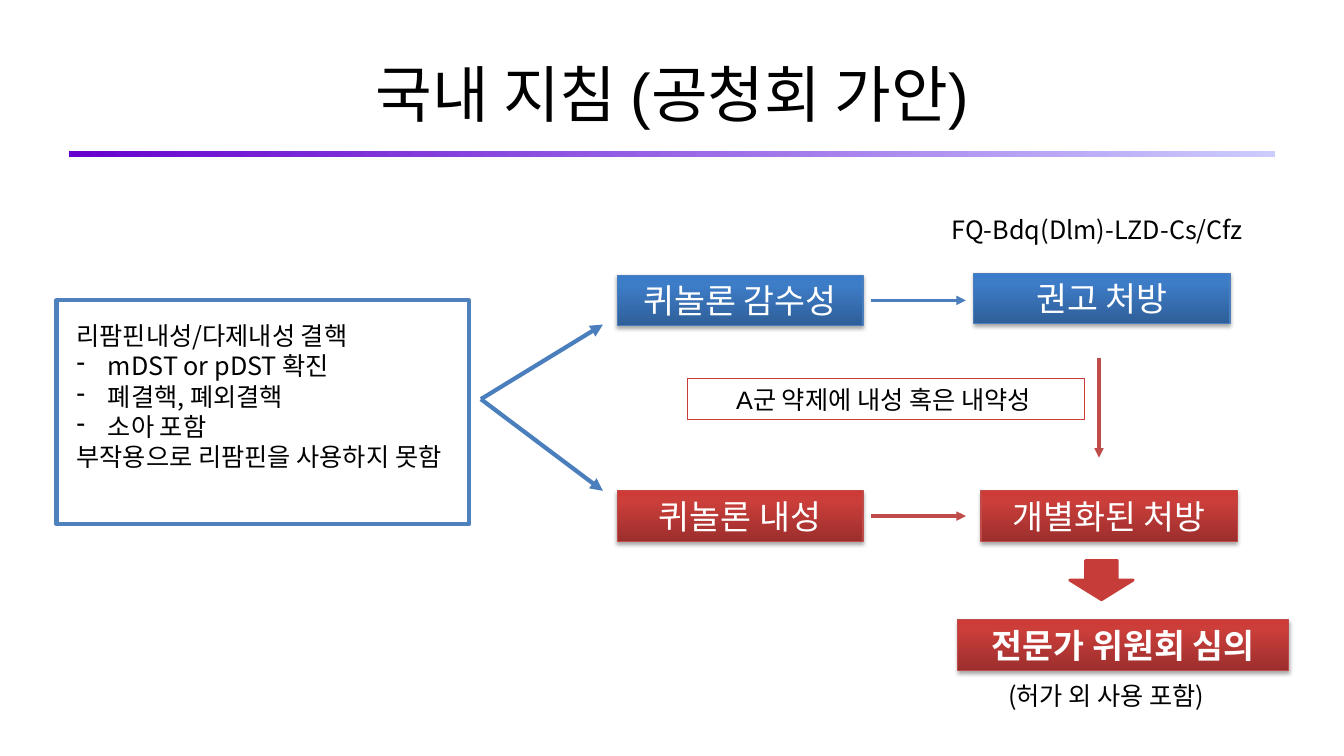
from copy import deepcopy

from lxml import etree
from pptx import Presentation, util as u
from pptx.dml.color import RGBColor
from pptx.enum import shapes, text
from pptx.oxml import parse_xml
from pptx.oxml.ns import nsdecls, qn

BLACK = RGBColor(0x00, 0x00, 0x00)
WHITE = RGBColor(0xFF, 0xFF, 0xFF)
BLUE = RGBColor(0x4B, 0x7E, 0xBC)
FRAME_BLUE = RGBColor(0x4F, 0x81, 0xBD)
RED = RGBColor(0xBF, 0x4C, 0x48)
BRIGHT_RED = RGBColor(0xC6, 0x3C, 0x39)
BLUE_STOPS = [(0, RGBColor(0x2F, 0x5F, 0x99)), (0.8, RGBColor(0x3D, 0x7C, 0xC7)),
              (1, RGBColor(0x3A, 0x7C, 0xCB))]
RED_STOPS = [(0, RGBColor(0x9C, 0x2F, 0x2D)), (0.8, RGBColor(0xCB, 0x3E, 0x3A)),
             (1, RGBColor(0xCE, 0x3B, 0x37))]
RULE_STOPS = [(0, RGBColor(0x66, 0x00, 0xCC)), (1, RGBColor(0xCC, 0xCC, 0xFF))]
LATIN, KOREAN = "Arial", "Noto Sans CJK KR"
SHADOW = (f'<a:outerShdw {nsdecls("a")} blurRad="{u.Pt(3.1)}" dist="{u.Pt(1.8)}" '
          'dir="5400000" rotWithShape="0"><a:srgbClr val="000000">'
          '<a:alpha val="35000"/></a:srgbClr></a:outerShdw>')

presentation = Presentation()
presentation.slide_width, presentation.slide_height = u.Inches(13.33), u.Inches(7.5)
slide = presentation.slides.add_slide(presentation.slide_layouts[5])


def add_box(place, kind=shapes.MSO_SHAPE.RECTANGLE, stops=None, angle=90, line=None, width=0.75):
    shape = slide.shapes.add_shape(kind, *map(u.Inches, place))
    shape.shadow.inherit = False
    if stops:
        shape.fill.gradient()
        shape.fill.gradient_angle = angle
        stop_list = shape._element.spPr.find(".//" + qn("a:gsLst"))
        for _ in stops[2:]:
            stop_list.append(deepcopy(stop_list[0]))
        for stop, (position, color) in zip(shape.fill.gradient_stops, stops):
            stop.position = position
            stop.color.rgb = color
    else:
        shape.fill.background()
    if line is None:
        shape.line.fill.background()
    else:
        shape.line.color.rgb = line
        shape.line.width = u.Pt(width)
    return shape


def write(shape, words, size, font=LATIN, color=BLACK, align=text.PP_ALIGN.CENTER, bold=False):
    frame = shape.text_frame
    frame.word_wrap = True
    frame.text = words
    for paragraph in frame.paragraphs:
        paragraph.alignment = align
        for run in paragraph.runs:
            run.font.size = u.Pt(size)
            run.font.name = font
            run.font.color.rgb = color
            run.font.bold = bold


title = slide.shapes.title
title.left, title.top, title.width, title.height = map(u.Inches, (0.67, 0.3, 12, 1.25))
title.text_frame.vertical_anchor = text.MSO_ANCHOR.MIDDLE
write(title, "국내 지침 (공청회 가안)", 44)
add_box((0.68, 1.5, 11.97, 0.06), stops=RULE_STOPS, angle=0)

fork = (4.77, 3.96)
arrows = [
    (fork, (5.98, 3.22), BLUE, 3),
    (fork, (5.98, 4.87), BLUE, 3),
    ((8.64, 2.98), (9.58, 2.98), BLUE, 2.25),
    ((8.64, 5.12), (9.58, 5.12), RED, 2.25),
    ((10.9, 3.55), (10.9, 4.54), RED, 2.25),
]
for start, end, color, width in arrows:
    arrow = slide.shapes.add_connector(
        shapes.MSO_CONNECTOR.STRAIGHT, *map(u.Inches, start + end))
    arrow.line.color.rgb = color
    arrow.line.width = u.Pt(width)
    etree.SubElement(arrow.line._get_or_add_ln(), qn("a:tailEnd"), type="triangle")
    etree.SubElement(arrow._element.spPr, qn("a:effectLst"))

steps = [
    ("퀴놀론 감수성", 6.12, 2.73, 2.44, BLUE_STOPS, BLUE, LATIN, False),
    ("퀴놀론 내성", 6.12, 4.87, 2.44, RED_STOPS, RED, LATIN, False),
    ("권고 처방", 9.66, 2.71, 2.54, BLUE_STOPS, BLUE, LATIN, False),
    ("개별화된 처방", 9.73, 4.87, 2.54, RED_STOPS, RED, LATIN, False),
    ("전문가 위원회 심의", 9.5, 6.15, 3.28, RED_STOPS, RED, KOREAN, True),
]
for words, left, top, width, stops, line, font, bold in steps:
    step = add_box((left, top, width, 0.5), stops=stops, line=line)
    step._element.spPr.find(qn("a:effectLst")).append(parse_xml(SHADOW))
    write(step, words, 24, font, WHITE, bold=bold)

condition = add_box((6.82, 3.76, 3.94, 0.4), line=BRIGHT_RED)
write(condition, "A군 약제에 내성 혹은 내약성 ", 18)

review_arrow = add_box((10.61, 5.56, 0.63, 0.39), shapes.MSO_SHAPE.DOWN_ARROW,
                       line=BRIGHT_RED, width=2)
review_arrow.fill.solid()
review_arrow.fill.fore_color.rgb = BRIGHT_RED

patients = add_box((0.56, 2.98, 4.09, 2.22), line=FRAME_BLUE, width=3)
frame = patients.text_frame
frame.margin_left = frame.margin_right = frame.margin_top = frame.margin_bottom = u.Inches(0.2)
frame.vertical_anchor = text.MSO_ANCHOR.TOP
write(patients, "리팜핀내성/다제내성 결핵\nmDST or pDST 확진\n폐결핵, 폐외결핵\n소아 포함\n"
      "부작용으로 리팜핀을 사용하지 못함", 18, KOREAN, align=text.PP_ALIGN.LEFT)
for paragraph in frame.paragraphs[1:4]:
    properties = paragraph._p.get_or_add_pPr()
    properties.set("marL", str(u.Inches(0.31)))
    properties.set("indent", str(-u.Inches(0.31)))
    etree.SubElement(properties, qn("a:buChar"), char="-")

notes = [
    ("(허가 외 사용 포함)", (9.9, 6.7, 3.07, 0.4)),
    ("FQ-Bdq(Dlm)-LZD-Cs/Cfz", (9.34, 2.08, 3.31, 0.4)),
]
for words, place in notes:
    note = slide.shapes.add_textbox(*map(u.Inches, place))
    write(note, words, 18, KOREAN, align=text.PP_ALIGN.LEFT)

presentation.save("out.pptx")
